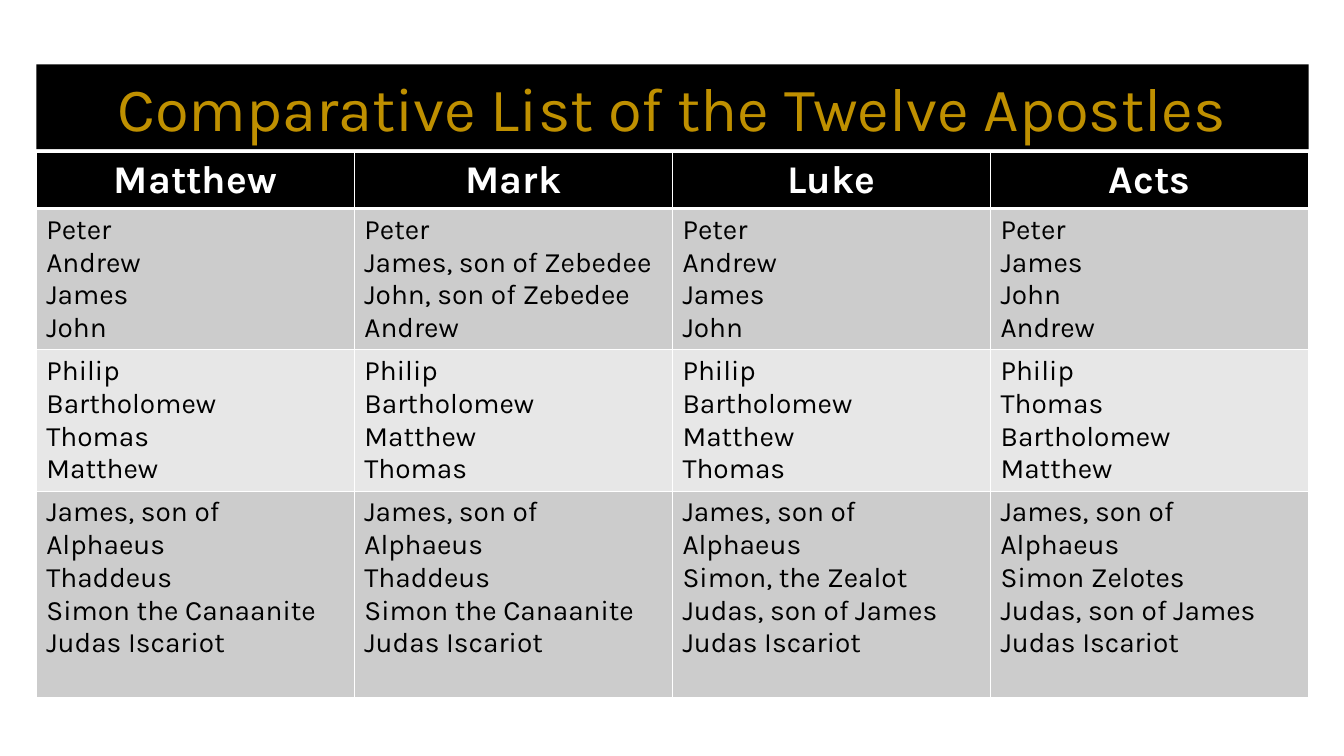
from lxml.etree import SubElement
from pptx import Presentation
from pptx.dml.color import RGBColor
from pptx.enum.shapes import MSO_SHAPE
from pptx.enum.text import PP_ALIGN
from pptx.oxml.ns import qn
from pptx.util import Pt

EMU_PER_PX = 9144  # 100 px to the inch
FONT = "Karla"
BLACK = RGBColor(0x00, 0x00, 0x00)
WHITE = RGBColor(0xFF, 0xFF, 0xFF)
GOLD = RGBColor(0xBF, 0x90, 0x00)
GREY = RGBColor(0xCC, 0xCC, 0xCC)
LIGHT_GREY = RGBColor(0xE7, 0xE7, 0xE7)

TITLE = "Comparative List of the Twelve Apostles"
BOOKS = ["Matthew", "Mark", "Luke", "Acts"]
APOSTLE_GROUPS = [
    [
        "Peter\nAndrew\nJames\nJohn",
        "Peter\nJames, son of Zebedee\nJohn, son of Zebedee\nAndrew",
        "Peter\nAndrew\nJames\nJohn",
        "Peter\nJames\nJohn\nAndrew",
    ],
    [
        "Philip\nBartholomew\nThomas\nMatthew",
        "Philip\nBartholomew\nMatthew\nThomas",
        "Philip\nBartholomew\nMatthew\nThomas",
        "Philip\nThomas\nBartholomew\nMatthew",
    ],
    [
        "James, son of Alphaeus\nThaddeus\nSimon the Canaanite\nJudas Iscariot",
        "James, son of Alphaeus\nThaddeus\nSimon the Canaanite\nJudas Iscariot",
        "James, son of Alphaeus\nSimon, the Zealot\nJudas, son of James\nJudas Iscariot",
        "James, son of Alphaeus\nSimon Zelotes\nJudas, son of James\nJudas Iscariot",
    ],
]
ROW_HEIGHTS = [56, 140, 140, 205]


def px(length):
    return length * EMU_PER_PX


def write(text_frame, text, size, color, bold=False, align=PP_ALIGN.LEFT):
    text_frame.text = text
    for paragraph in text_frame.paragraphs:
        paragraph.alignment = align
        for run in paragraph.runs:
            run.font.name = FONT
            run.font.size = Pt(size)
            run.font.bold = bold
            run.font.color.rgb = color


def set_borders(cell, widths, color):
    """Draw the cell's borders; widths are points for left, right, top, bottom."""
    properties = cell._tc.get_or_add_tcPr()
    for index, (side, width) in enumerate(zip("LRTB", widths)):
        line = properties.makeelement(qn(f"a:ln{side}"), {"w": str(Pt(width))})
        fill = SubElement(line, qn("a:solidFill"))
        SubElement(fill, qn("a:srgbClr"), val=str(color))
        properties.insert(index, line)


def add_title_bar(slide, left, top, width, height):
    bar = slide.shapes.add_shape(
        MSO_SHAPE.RECTANGLE, px(left), px(top), px(width), px(height))
    bar.shadow.inherit = False
    bar.fill.solid()
    bar.fill.fore_color.rgb = BLACK
    bar.line.fill.background()
    bar.text_frame.word_wrap = True
    write(bar.text_frame, TITLE, 44, GOLD, align=PP_ALIGN.CENTER)


def add_apostle_table(slide, left, top, width, row_heights):
    rows = [BOOKS] + APOSTLE_GROUPS
    table = slide.shapes.add_table(
        len(rows), len(BOOKS), px(left), px(top), px(width), px(sum(row_heights))).table
    for column in table.columns:
        column.width = px(width) // len(BOOKS)
    for row_index, (texts, height) in enumerate(zip(rows, row_heights)):
        table.rows[row_index].height = px(height)
        is_header = row_index == 0
        band = GREY if row_index % 2 else LIGHT_GREY
        for column_index, text in enumerate(texts):
            cell = table.cell(row_index, column_index)
            cell.fill.solid()
            cell.fill.fore_color.rgb = BLACK if is_header else band
            top_width = 3 if row_index == 1 else 1
            bottom_width = 3 if is_header else 1
            set_borders(cell, (1, 1, top_width, bottom_width), WHITE)
            if is_header:
                write(cell.text_frame, text, 28, WHITE, True, PP_ALIGN.CENTER)
            else:
                write(cell.text_frame, text, 20, BLACK)


def main():
    presentation = Presentation()
    presentation.slide_width = px(1333)
    presentation.slide_height = px(750)
    slide = presentation.slides.add_slide(presentation.slide_layouts[6])
    add_apostle_table(slide, 36, 151, 1262, ROW_HEIGHTS)
    add_title_bar(slide, 36, 64, 1262, 84)
    presentation.save("out.pptx")


if __name__ == "__main__":
    main()
